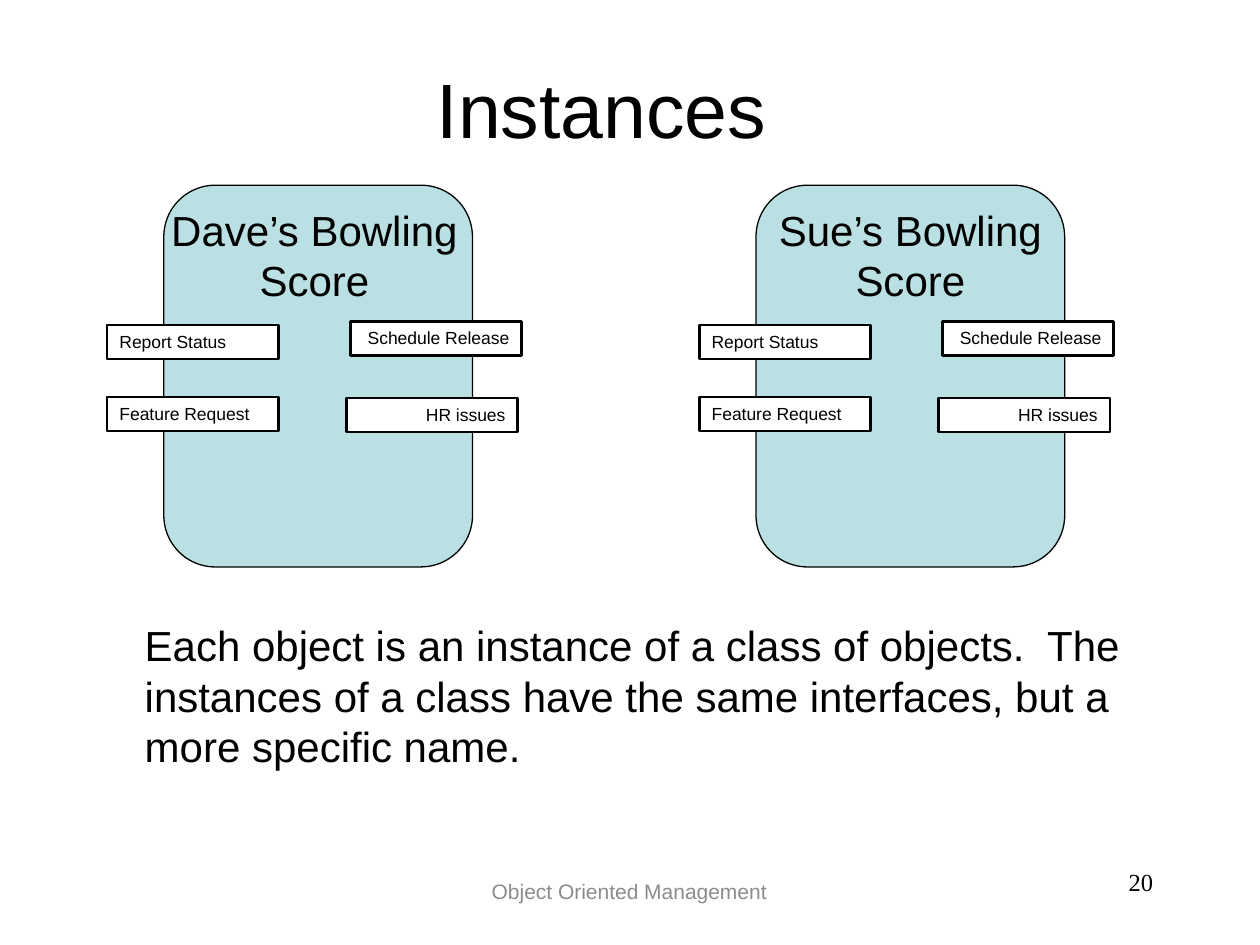
from dataclasses import dataclass

from pptx import Presentation
from pptx import util as u
from pptx.dml.color import RGBColor
from pptx.enum import shapes, text


@dataclass(frozen=True)
class Theme:
    ink: str = "000000"
    muted: str = "8C8C8C"
    card: str = "BBE0E3"
    label: str = "FFFFFF"
    font: str = "Arial"
    number_font: str = "Times New Roman"
    title_size: int = 44
    body_size: int = 24
    number_size: int = 14
    footer_size: int = 12
    label_size: int = 10


THEME = Theme()


def write_text(shape, words, size, color=THEME.ink, font=THEME.font,
               align=text.PP_ALIGN.LEFT, anchor=text.MSO_ANCHOR.TOP):
    frame = shape.text_frame
    frame.word_wrap = True
    frame.auto_size = text.MSO_AUTO_SIZE.NONE
    frame.vertical_anchor = anchor
    frame.margin_left = frame.margin_right = u.Inches(0.1)
    frame.margin_top = frame.margin_bottom = u.Inches(0.05)
    paragraph = frame.paragraphs[0]
    paragraph.alignment = align
    run = paragraph.add_run()
    run.text = words
    run.font.name = font
    run.font.size = u.Pt(size)
    run.font.color.rgb = RGBColor.from_string(color)


class SlideBuilder:
    def __init__(self, slide, theme):
        self.slide = slide
        self.theme = theme

    def title(self, words, left, top, width, height):
        shape = self.slide.shapes.title
        shape.left, shape.top = u.Inches(left), u.Inches(top)
        shape.width, shape.height = u.Inches(width), u.Inches(height)
        write_text(shape, words, self.theme.title_size,
                   align=text.PP_ALIGN.CENTER, anchor=text.MSO_ANCHOR.MIDDLE)

    def text_box(self, words, left, top, width, height, size, **style):
        shape = self.slide.shapes.add_textbox(
            *map(u.Inches, (left, top, width, height)))
        write_text(shape, words, size, **style)

    def box(self, kind, left, top, width, height, fill, line_width):
        shape = self.slide.shapes.add_shape(
            kind, *map(u.Inches, (left, top, width, height)))
        shape.shadow.inherit = False
        shape.fill.solid()
        shape.fill.fore_color.rgb = RGBColor.from_string(fill)
        shape.line.color.rgb = RGBColor.from_string(self.theme.ink)
        shape.line.width = u.Pt(line_width)
        return shape

    def label(self, words, left, top, align):
        shape = self.box(shapes.MSO_SHAPE.RECTANGLE, left, top, 1.36, 0.27,
                         self.theme.label, 1.5)
        write_text(shape, words, self.theme.label_size, align=align)

    def instance(self, name, left, name_left, name_width, labels):
        """Draw a card with its name and the interface labels on its sides."""
        card = self.box(shapes.MSO_SHAPE.ROUNDED_RECTANGLE, left, 1.47,
                        2.45, 3.03, self.theme.card, 0.75)
        card.adjustments[0] = 0.167
        self.text_box(name, name_left, 1.57, name_width, 0.91,
                      self.theme.body_size, align=text.PP_ALIGN.CENTER)
        for words, offset, top, align in labels:
            self.label(words, left + offset, top, align)


# Interface labels: words, offset from the card's left edge, top, alignment
INTERFACES = [
    ("Report Status", -0.45, 2.58, text.PP_ALIGN.LEFT),
    ("Feature Request", -0.45, 3.15, text.PP_ALIGN.LEFT),
    ("Schedule Release", 1.48, 2.55, text.PP_ALIGN.RIGHT),
    ("HR issues", 1.45, 3.16, text.PP_ALIGN.RIGHT),
]


def main():
    presentation = Presentation()
    presentation.slide_width = u.Inches(10)
    presentation.slide_height = u.Inches(7.5)
    title_only = presentation.slide_layouts[5]
    builder = SlideBuilder(presentation.slides.add_slide(title_only), THEME)

    # Title
    builder.title("Instances", 0.85, 0.44, 7.85, 0.83)

    # Two instances with the same interfaces
    builder.instance("Dave’s Bowling Score", 1.3, 1.24, 2.51, INTERFACES)
    builder.instance("Sue’s Bowling Score", 6, 6.03, 2.39, INTERFACES)

    # Explanation
    builder.text_box(
        "Each object is an instance of a class of objects.  The instances of "
        "a class have the same interfaces, but a more specific name.",
        1.05, 4.87, 8.19, 1.31, THEME.body_size)

    # Footer and slide number
    builder.text_box("Object Oriented Management", 2.95, 6.83, 4.09, 0.49,
                     THEME.footer_size, color=THEME.muted,
                     align=text.PP_ALIGN.CENTER, anchor=text.MSO_ANCHOR.MIDDLE)
    builder.text_box("20", 7.17, 6.83, 2.08, 0.49, THEME.number_size,
                     font=THEME.number_font, align=text.PP_ALIGN.RIGHT)

    presentation.save("out.pptx")


if __name__ == "__main__":
    main()
